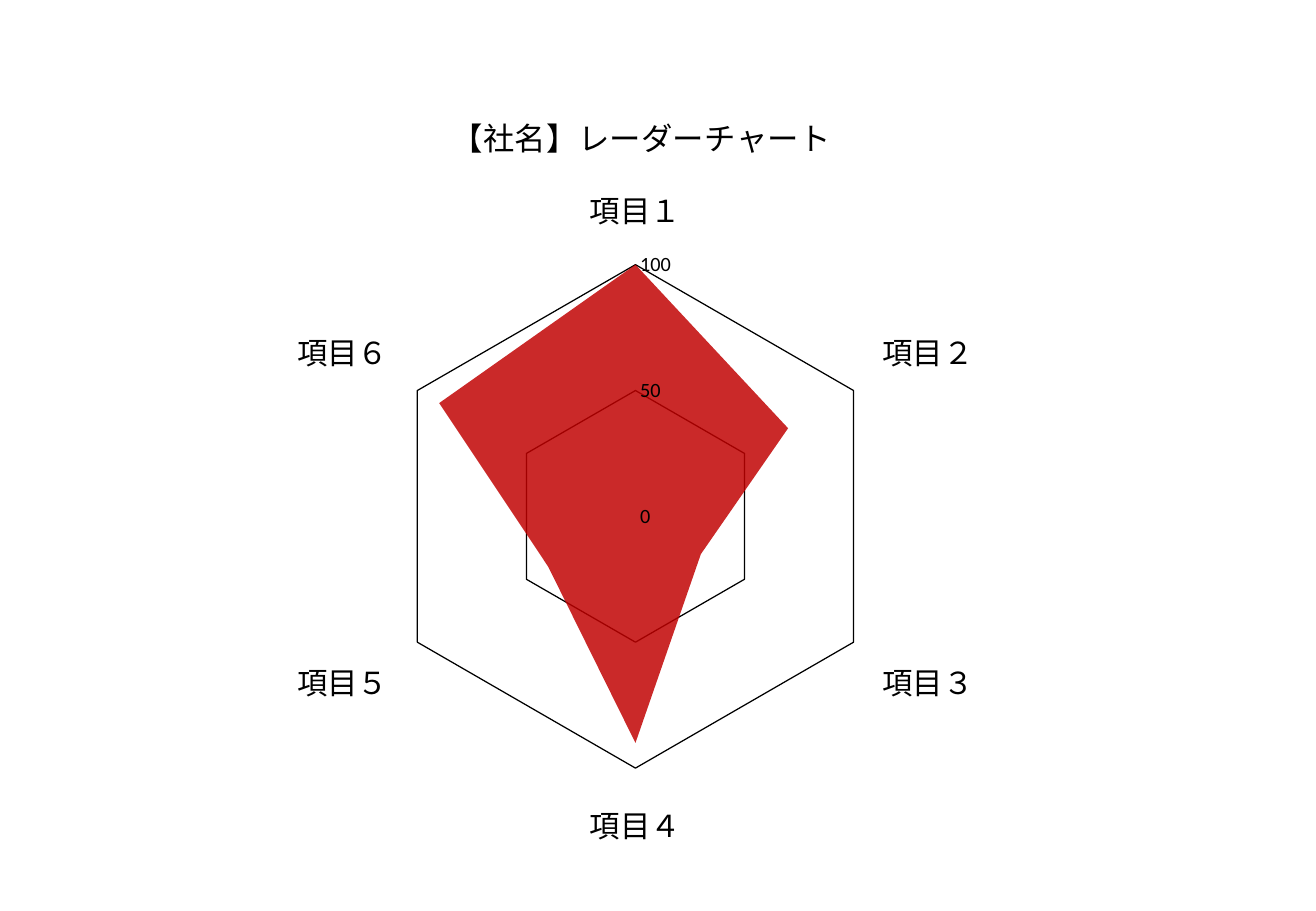
import pptx
import pptx.chart.data
import pptx.dml.color
import pptx.enum.chart
import pptx.oxml
import pptx.oxml.ns
import pptx.util

Inches, Pt = pptx.util.Inches, pptx.util.Pt
RGB = pptx.dml.color.RGBColor.from_string
qn = pptx.oxml.ns.qn
FONT = "Calibri"
COLORS = {"text": "000000", "grid": "000000", "axis": "D9D9D9", "area": "C00000"}
TITLE = "【社名】レーダーチャート"
SCORES = {"項目１": 100, "項目２": 70, "項目３": 30,
          "項目４": 90, "項目５": 40, "項目６": 90}


def set_font(font, size):
    font.name = FONT
    font.size = Pt(size)
    font.bold = False
    font.color.rgb = RGB(COLORS["text"])


def set_layout(parent, index, **settings):
    """Place a chart part by fractions of the chart area."""
    old = parent.find(qn("c:layout"))
    if old is not None:
        parent.remove(old)
    items = "".join(f'<c:{k} val="{v}"/>' for k, v in settings.items())
    parent.insert(index, pptx.oxml.parse_xml(
        f'<c:layout {pptx.oxml.ns.nsdecls("c")}>'
        f'<c:manualLayout>{items}</c:manualLayout></c:layout>'))


prs = pptx.Presentation()
prs.slide_width, prs.slide_height = Inches(10.83), Inches(7.5)
s = prs.slides.add_slide(prs.slide_layouts[6])

data = pptx.chart.data.CategoryChartData()
data.categories = list(SCORES)
data.add_series(TITLE, list(SCORES.values()))
chart = s.shapes.add_chart(
    pptx.enum.chart.XL_CHART_TYPE.RADAR_FILLED,
    Inches(0.9), Inches(0.6), Inches(8.66), Inches(6.58), data).chart
set_font(chart.font, 10)
chart.has_legend = False

# Title
chart.has_title = True
title = chart.chart_title
title.include_in_layout = False
p = title.text_frame.paragraphs[0]
r = p.add_run()
r.text = TITLE
set_font(r.font, 18.6)
set_layout(title._element, 1, xMode="edge", yMode="edge", x=0.32, y=0.04)

# Plot and series
plot = chart.plots[0]
plot.vary_by_categories = False
set_layout(chart._chartSpace.chart.plotArea, 0, layoutTarget="inner",
           xMode="edge", yMode="edge", x=0.26, y=0.24, w=0.48, h=0.63)
series = plot.series[0]
series.format.line.fill.background()
fill = series.format.fill
fill.solid()
fill.fore_color.rgb = RGB(COLORS["area"])
color = series._element.find(f'{qn("c:spPr")}/{qn("a:solidFill")}/{qn("a:srgbClr")}')
color.append(pptx.oxml.parse_xml(
    f'<a:alpha {pptx.oxml.ns.nsdecls("a")} val="84000"/>'))

# Axes
cat_axis, val_axis = chart.category_axis, chart.value_axis
for axis, size in ((cat_axis, 18), (val_axis, 12)):
    set_font(axis.tick_labels.font, size)
    axis.major_tick_mark = axis.minor_tick_mark = pptx.enum.chart.XL_TICK_MARK.NONE
cat_axis.has_major_gridlines = False
cat_axis.format.line.color.rgb = RGB(COLORS["axis"])
cat_axis.format.line.width = Pt(0.75)
val_axis.minimum_scale, val_axis.maximum_scale = 0, 100
val_axis.major_unit = 50
val_axis.format.line.fill.background()
val_axis.has_major_gridlines = True
grid = val_axis.major_gridlines.format.line
grid.color.rgb = RGB(COLORS["grid"])
grid.width = Pt(0.75)

prs.save("out.pptx")
